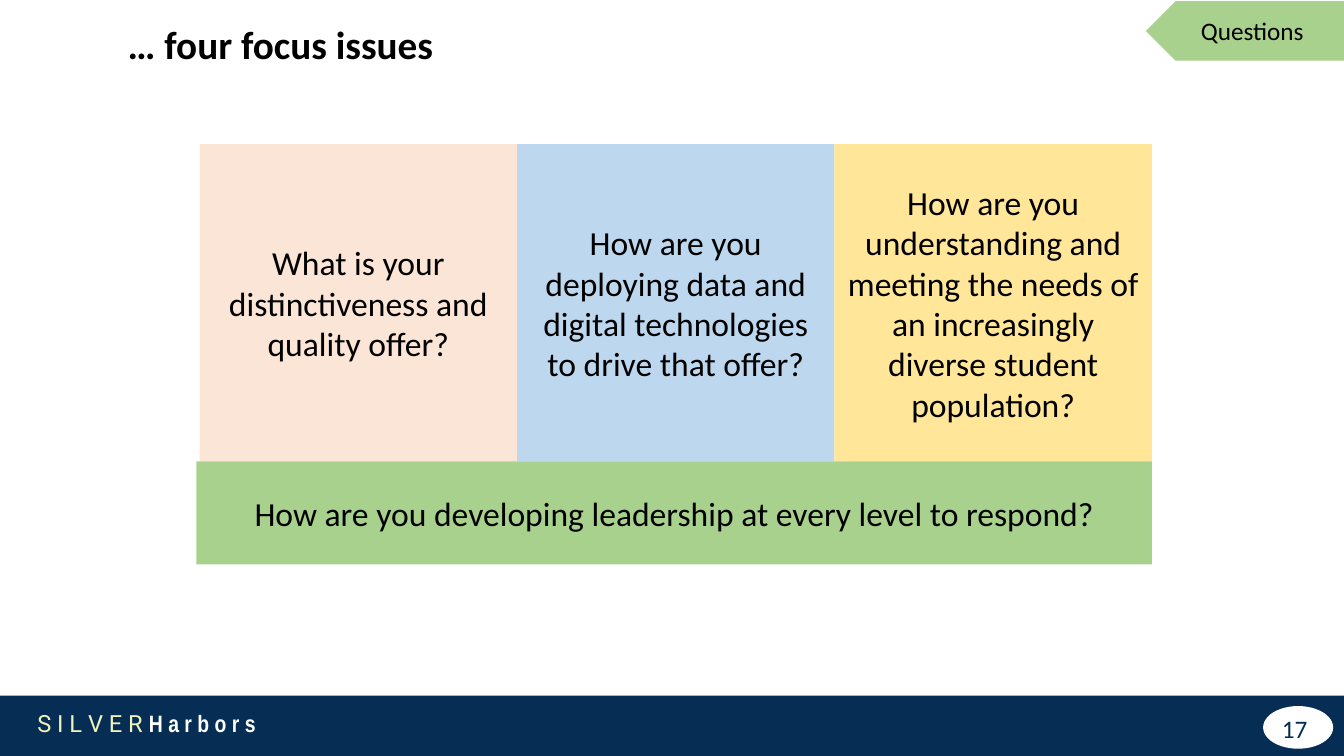
"""Build a slide that sets out four focus issues for discussion."""
from pptx import Presentation
from pptx.dml.color import RGBColor
from pptx.enum.shapes import MSO_SHAPE as Shape
from pptx.enum.text import MSO_ANCHOR as Anchor, PP_ALIGN as Align
from pptx.util import Cm, Pt

NAVY = RGBColor(0x06, 0x2D, 0x53)
WHITE = RGBColor(0xFF, 0xFF, 0xFF)
BLACK = RGBColor(0, 0, 0)
CREAM = RGBColor(0xF0, 0xF3, 0xBD)
PEACH = RGBColor(0xFB, 0xE5, 0xD6)
BLUE = RGBColor(0xBD, 0xD7, 0xEE)
YELLOW = RGBColor(0xFF, 0xE6, 0x99)
GREEN = RGBColor(0xA9, 0xD1, 0x8E)

SLIDE_WIDTH, SLIDE_HEIGHT = 33.87, 19.05
ISSUES = [
    ("What is your distinctiveness and quality offer?", PEACH),
    ("How are you deploying data and digital technologies to drive that offer?", BLUE),
    ("How are you understanding and meeting the needs of an increasingly "
     "diverse student population?", YELLOW),
]
LEADERSHIP = "How are you developing leadership at every level to respond?"


def style_run(run, size, color, font="Calibri", bold=False):
    """Set the size, colour, typeface and weight of a run."""
    run.font.size = Pt(size)
    run.font.color.rgb = color
    run.font.name = font
    run.font.bold = bold


def add_panel(slide, kind, box, color):
    """Add a filled shape without outline or shadow."""
    shape = slide.shapes.add_shape(kind, *map(Cm, box))
    shape.shadow.inherit = False
    shape.fill.solid()
    shape.fill.fore_color.rgb = color
    shape.line.fill.background()
    return shape


def add_label(slide, box, align=Align.LEFT):
    """Add a wrapping text box and return its first paragraph."""
    text_frame = slide.shapes.add_textbox(*map(Cm, box)).text_frame
    text_frame.word_wrap = True
    paragraph = text_frame.paragraphs[0]
    paragraph.alignment = align
    return paragraph


def add_plate(slide, box, text, color, size=24, point=0):
    """Add a pentagon plate with centred text and a point of the given depth."""
    shape = add_panel(slide, Shape.PENTAGON, box, color)
    shape.adjustments[0] = point
    text_frame = shape.text_frame
    text_frame.text = text
    text_frame.word_wrap = True
    text_frame.vertical_anchor = Anchor.MIDDLE
    paragraph = text_frame.paragraphs[0]
    paragraph.alignment = Align.CENTER
    style_run(paragraph.runs[0], size, BLACK)
    return shape


def add_header(slide, left, top, width):
    """Add the title and the tag that points in from the right edge."""
    title = add_label(slide, (left + 2.97, top + 0.38, 27.33, 1.45))
    title.text = "… four focus issues"
    style_run(title.runs[0], 28, BLACK, bold=True)
    tag_box = (left + width - 4.99, top + 0.03, 4.99, 1.5)
    tag = add_plate(slide, tag_box, "Questions", GREEN, 18, 0.5)
    tag.element.spPr.xfrm.set("flipH", "1")


def add_issues(slide, left, top, side, base_height):
    """Add a row of square issues resting on the leadership issue."""
    for column, (text, color) in enumerate(ISSUES):
        add_plate(slide, (left + column * side, top, side, side), text, color)
    base_box = (left - 0.08, top + side, len(ISSUES) * side + 0.08, base_height)
    add_plate(slide, base_box, LEADERSHIP, GREEN)


def add_footer(slide, left, top, width, height):
    """Add the footer band with the name and the page number."""
    add_panel(slide, Shape.RECTANGLE, (left, top, width, height), NAVY)
    name = add_label(slide, (left + 0.69, top + 0.22, 6.55, height))
    for text, color, font, bold in (
        ("S I L V E R ", CREAM, "Roboto", False),
        ("H a r b o r s", WHITE, "Arial Narrow", True),
    ):
        run = name.add_run()
        run.text = text
        style_run(run, 16.9, color, font, bold)
    right = left + width
    badge = add_panel(slide, Shape.OVAL, (right - 2.02, top + 0.28, 1.73, 1.04), WHITE)
    badge.line.color.rgb = WHITE
    badge.line.width = Pt(1)
    number = add_label(slide, (right - 8.29, top + 0.33, 7.62, 1.02), Align.RIGHT)
    number.text = "17"
    style_run(number.runs[0], 18, NAVY)


def main():
    """Create the presentation and save it."""
    presentation = Presentation()
    presentation.slide_width = Cm(SLIDE_WIDTH)
    presentation.slide_height = Cm(SLIDE_HEIGHT)
    slide = presentation.slides.add_slide(presentation.slide_layouts[6])
    add_footer(slide, 0, SLIDE_HEIGHT - 1.52, SLIDE_WIDTH, 1.52)
    add_header(slide, 0, 0, SLIDE_WIDTH)
    add_issues(slide, 5.03, 3.63, 8, 2.59)
    presentation.save("out.pptx")


if __name__ == "__main__":
    main()
